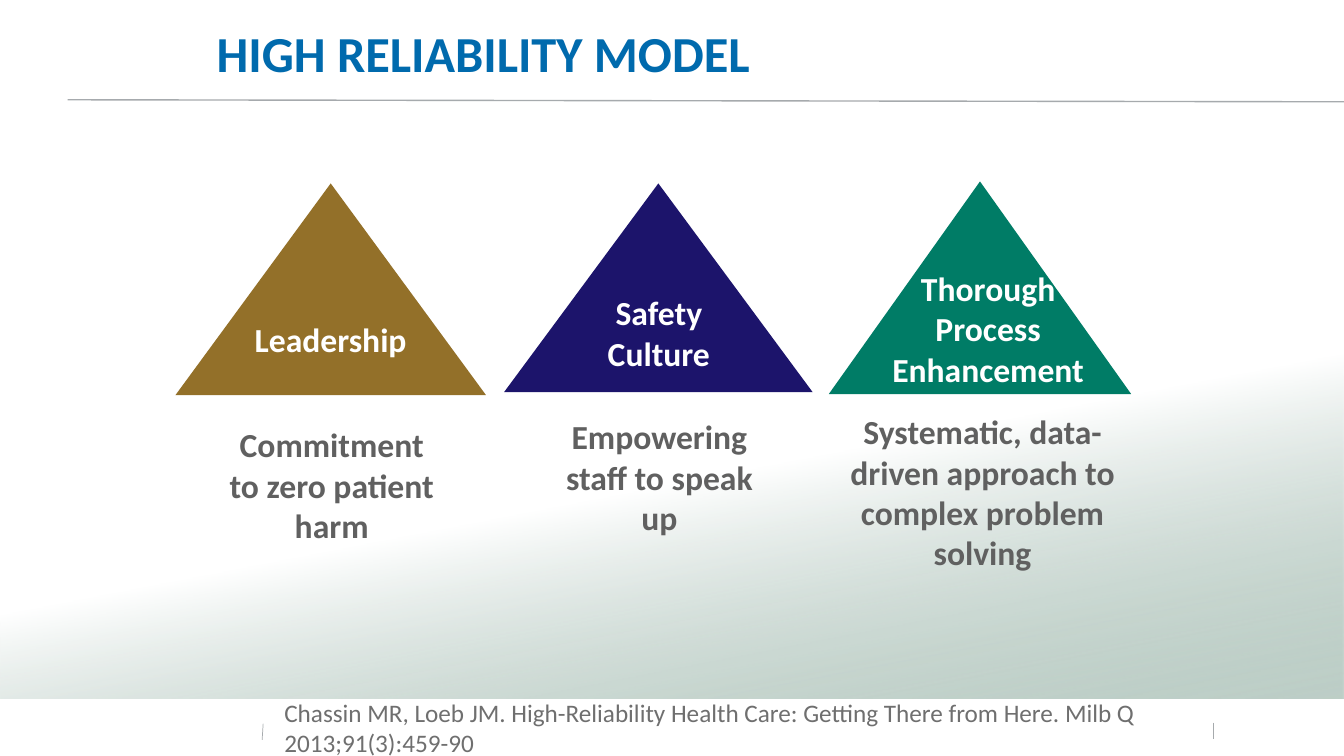
"""Build the High Reliability Model slide."""
import pptx
import pptx.util
import pptx.dml.color
import pptx.enum.shapes
import pptx.enum.text
import pptx.oxml.ns
import lxml.etree

Inches = pptx.util.Inches
Pt = pptx.util.Pt
RGBColor = pptx.dml.color.RGBColor
SHAPE = pptx.enum.shapes.MSO_SHAPE
ALIGN = pptx.enum.text.PP_ALIGN
qn = pptx.oxml.ns.qn

FONT = "Calibri"
WHITE = RGBColor(0xFF, 0xFF, 0xFF)
SAGE = RGBColor(0x7D, 0x9F, 0x90)
RULE = RGBColor(0xA6, 0xAA, 0xAD)
BLUE = RGBColor(0x00, 0x6A, 0xAD)
GRAY = RGBColor(0x60, 0x60, 0x60)
CITE = RGBColor(0x6F, 0x6F, 0x6F)
GOLD = RGBColor(0x93, 0x70, 0x29)
NAVY = RGBColor(0x1C, 0x14, 0x6B)
GREEN = RGBColor(0x00, 0x7C, 0x66)

TITLE = "HIGH RELIABILITY MODEL"
SOURCE = ("Chassin MR, Loeb JM. High-Reliability Health Care: "
          "Getting There from Here. Milb Q 2013;91(3):459-90")

RULES = [
    (2.61, 7.18, 2.6, 7.34, 0.5),
    (12.03, 7.17, 12.03, 7.33, 0.5),
    (0.67, 0.99, 13.33, 1.01, 1),
]

PILLARS = [
    (GOLD, (1.74, 1.82, 3.08, 2.1),
     "Leadership", (2.28, 3.11, 2, 0.5),
     "Commitment to zero patient harm", (2.12, 4.16, 2.34, 1.31)),
    (NAVY, (5, 1.82, 3.06, 2.07),
     "Safety Culture", (5.57, 2.85, 1.93, 0.91),
     "Empowering staff to speak up", (5.37, 4.08, 2.34, 1.31)),
    (GREEN, (8.22, 1.8, 3, 2.11),
     "Thorough Process Enhancement", (8.69, 2.61, 2.22, 1.31),
     "Systematic, data-driven approach to complex problem solving",
     (8.22, 4.03, 3.05, 1.72)),
]


def add_form(slide, kind, box):
    form = slide.shapes.add_shape(kind, *map(Inches, box))
    form.shadow.inherit = False
    form.line.fill.background()
    return form


def add_wash(slide):
    wash = add_form(slide, SHAPE.RECTANGLE, (0, 1.55, 13.33, 5.38))
    wash.fill.gradient()
    wash.fill.gradient_angle = 360 - 259
    for stop, place, color in zip(wash.fill.gradient_stops, (0, 0.43), (SAGE, WHITE)):
        stop.position = place
        stop.color.rgb = color
    tint = next(wash.element.iter(qn("a:srgbClr")))
    lxml.etree.SubElement(tint, qn("a:alpha")).set("val", "50000")


def add_rule(slide, left, top, right, low, width):
    rule = slide.shapes.add_connector(
        pptx.enum.shapes.MSO_CONNECTOR.STRAIGHT,
        *map(Inches, (left, top, right, low)))
    rule.line.color.rgb = RULE
    rule.line.width = Pt(width)
    lxml.etree.SubElement(rule.element.spPr, qn("a:effectLst"))


def add_text(slide, text, box, size, color, bold=True, align=ALIGN.CENTER):
    frame = slide.shapes.add_textbox(*map(Inches, box)).text_frame
    frame.word_wrap = True
    frame.text = text
    para = frame.paragraphs[0]
    para.alignment = align
    font = para.runs[0].font
    font.name = FONT
    font.size = Pt(size)
    font.bold = bold
    font.color.rgb = color
    return frame


def main():
    deck = pptx.Presentation()
    deck.slide_width = Inches(13.33)
    deck.slide_height = Inches(7.5)
    slide = deck.slides.add_slide(deck.slide_layouts[6])

    add_wash(slide)
    for rule in RULES:
        add_rule(slide, *rule)

    for color, peak, name, spot, note, place in PILLARS:
        form = add_form(slide, SHAPE.ISOSCELES_TRIANGLE, peak)
        form.fill.solid()
        form.fill.fore_color.rgb = color
        add_text(slide, name, spot, 24, WHITE)
        add_text(slide, note, place, 24, GRAY)

    add_text(slide, TITLE, (2.05, 0.17, 5.55, 0.71), 36, BLUE, align=ALIGN.LEFT)
    foot = add_text(slide, SOURCE, (2.82, 6.92, 8.7, 0.29), 18, CITE, False, ALIGN.LEFT)
    foot.margin_left = foot.margin_top = 0
    deck.save("out.pptx")


if __name__ == "__main__":
    main()
